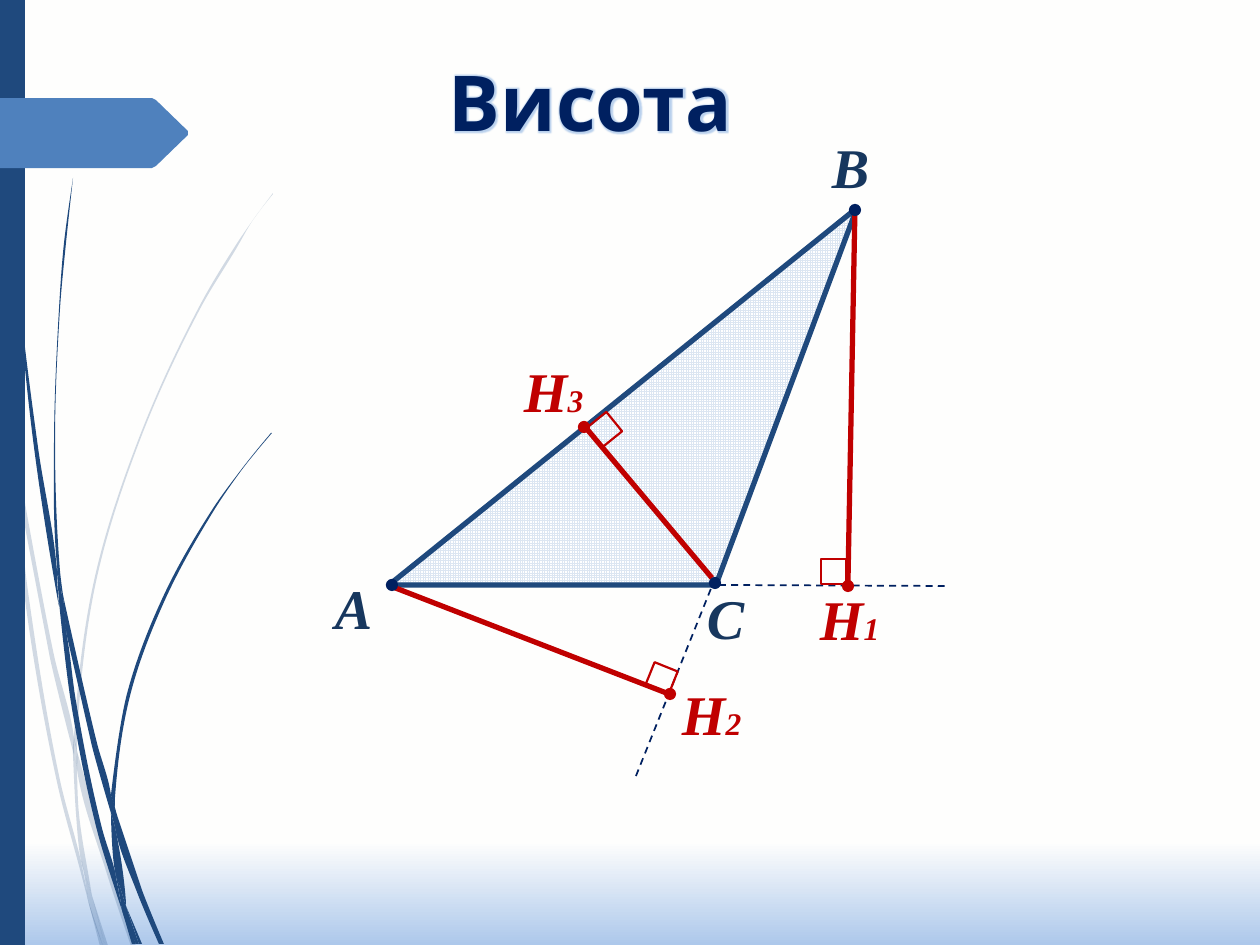
from math import hypot
from lxml.etree import SubElement, fromstring
from pptx import Presentation
from pptx.dml.color import RGBColor
from pptx.enum.dml import MSO_LINE, MSO_PATTERN
from pptx.enum.shapes import MSO_CONNECTOR as CONN, MSO_SHAPE as SHAPE
from pptx.enum.text import PP_ALIGN as ALIGN
from pptx.oxml.ns import nsdecls, qn
from pptx.util import Pt

PX = 914400 / 126
W, H = 1260, 945

NAVY = RGBColor(0x1F, 0x49, 0x7D)
BLUE = RGBColor(0x4F, 0x81, 0xBD)
INK = RGBColor(0x00, 0x20, 0x60)
LETTER = RGBColor(0x17, 0x37, 0x5E)
RED = RGBColor(0xC0, 0x00, 0x00)
PALE = RGBColor(0xDC, 0xE6, 0xF2)
WHITE = RGBColor(0xFF, 0xFF, 0xFF)
PAPER = RGBColor(0xFE, 0xFE, 0xFD)
SKY = RGBColor(0xAD, 0xC8, 0xEB)

# Outlines of the grass blade pieces
PALE_GRASS = [
    [(10, 441), (8, 406), (0, 355), (0, 377), (9, 433)],
    [(50, 658), (74, 755), (74, 738), (54, 655), (13, 435), (15, 474)],
    [(81, 765), (77, 751), (77, 769), (107, 874), (131, 946), (136, 946), (111, 872)],
    [(105, 946), (108, 946), (92, 896)],
    [(81, 861), (60, 780), (28, 591), (15, 474), (10, 441), (24, 592), (57, 782),
     (81, 873), (88, 900), (87, 891)],
    [(73, 755), (76, 814), (81, 861), (84, 872), (92, 896), (91, 890), (79, 814),
     (77, 769), (77, 766)],
    [(77, 736), (96, 582), (140, 440), (200, 309), (236, 249), (253, 220), (273, 194),
     (273, 193), (253, 220), (234, 248), (199, 307), (139, 438), (94, 581), (74, 736),
     (74, 738), (77, 751)],
    [(88, 900), (100, 946), (103, 946)],
    [(77, 766), (77, 769), (77, 751), (74, 738), (73, 755)],
    [(84, 872), (82, 861), (87, 891), (88, 900), (103, 946), (105, 946), (92, 896)],
]
DARK_GRASS = [
    [(6, 139), (18, 294), (34, 447), (58, 601), (59, 606), (57, 576), (57, 571),
     (38, 447), (19, 292), (8, 137), (5, 60), (4, 0), (3, 0), (4, 60)],
    [(92, 746), (111, 813), (111, 798), (111, 795), (97, 743), (63, 595), (67, 636)],
    [(118, 818), (115, 808), (115, 827), (137, 892), (159, 944), (164, 944), (142, 890)],
    [(115, 871), (102, 828), (76, 701), (67, 636), (59, 601), (71, 702), (97, 830),
     (116, 892), (122, 910), (121, 903)],
    [(63, 595), (60, 571), (55, 440), (60, 309), (66, 243), (73, 178), (64, 243),
     (59, 309), (54, 440), (57, 566), (62, 595)],
    [(139, 944), (142, 944), (126, 906)],
    [(59, 601), (67, 636), (63, 595), (62, 595), (57, 566), (57, 571)],
    [(115, 798), (130, 696), (165, 600), (213, 512), (241, 471), (256, 452), (272, 433),
     (271, 433), (256, 451), (241, 470), (212, 510), (163, 597), (127, 694), (111, 795),
     (115, 808)],
    [(122, 910), (132, 944), (136, 944)],
    [(111, 813), (115, 871), (121, 890), (126, 906), (126, 902), (115, 827), (113, 820)],
    [(111, 813), (113, 820), (115, 827), (115, 808), (111, 795), (111, 798)],
    [(121, 890), (115, 871), (121, 903), (122, 910), (136, 944), (139, 944), (126, 906)],
]
TAG = [(188, 135), (156, 166), (152, 168), (140, 168), (0, 168), (0, 98), (140, 98),
       (152, 98), (156, 100), (188, 131)]


def emu(*lengths):
    return [round(v * PX) for v in lengths]


def style(shape, fill=None, line=None, width=1.25):
    shape.shadow.inherit = False
    if fill is None:
        shape.fill.background()
    else:
        shape.fill.solid()
        shape.fill.fore_color.rgb = fill
    if line is None:
        shape.line.fill.background()
    else:
        shape.line.color.rgb = line
        shape.line.width = Pt(width)
    return shape


def add_preset(s, kind, x, y, w, h, **look):
    return style(s.shapes.add_shape(kind, *emu(x, y, w, h)), **look)


def add_outline(s, points, **look):
    start, *rest = [emu(*pt) for pt in points]
    builder = s.shapes.build_freeform(*start, scale=1.0)
    builder.add_line_segments(rest, close=True)
    return style(builder.convert_to_shape(), **look)


def add_line(s, start, end, color, width, dash=False):
    line = s.shapes.add_connector(CONN.STRAIGHT, *emu(*start, *end))
    line.line.color.rgb = color
    line.line.width = Pt(width)
    if dash:
        line.line.dash_style = MSO_LINE.DASH
    SubElement(line._element.spPr, qn("a:effectLst"))


def add_text(s, box, runs, font, color, italic=False, align=None, inset=0, wrap=False):
    """Place one paragraph made of (text, size) runs."""
    tf = s.shapes.add_textbox(*emu(*box)).text_frame
    tf.word_wrap = wrap
    tf.margin_left = tf.margin_right = emu(2 * inset)[0]
    tf.margin_top = tf.margin_bottom = emu(inset)[0]
    p = tf.paragraphs[0]
    p.alignment = align
    for text, size in runs:
        r = p.add_run()
        r.text = text
        r.font.name, r.font.size = font, Pt(size)
        r.font.bold, r.font.italic = True, italic
        r.font.color.rgb = color
    return p


def round_sides(shape):
    """Turn straight segments into curves, keeping sharp corners sharp."""
    segments = list(shape._element.iter(qn("a:moveTo"), qn("a:lnTo")))
    knots = [(int(g[0].get("x")), int(g[0].get("y"))) for g in segments]
    slopes = []
    for (ax, ay), (bx, by), (cx, cy) in zip(knots[-1:] + knots, knots, knots[1:] + knots[:1]):
        ux, uy, vx, vy = bx - ax, by - ay, cx - bx, cy - by
        n, m = hypot(ux, uy) or 1, hypot(vx, vy) or 1
        smooth = ux * vx + uy * vy > 0.9 * n * m
        slopes.append(((ux / n + vx / m) / 6, (uy / n + vy / m) / 6) if smooth else (0, 0))
    for i, seg in enumerate(segments[1:], 1):
        (ax, ay), (bx, by) = knots[i - 1:i + 1]
        (sx, sy), (ex, ey) = slopes[i - 1:i + 1]
        d = hypot(bx - ax, by - ay)
        seg.tag = qn("a:cubicBezTo")
        for j, (px, py) in enumerate([(ax + sx * d, ay + sy * d), (bx - ex * d, by - ey * d)]):
            seg.insert(j, fromstring(
                f'<a:pt {nsdecls("a")} x="{round(px)}" y="{round(py)}"/>'))


def add_grass(s, x, y, pieces, alpha=None):
    group = s.shapes.add_group_shape()
    for piece in pieces:
        blade = add_outline(group, [(x + px, y + py) for px, py in piece], fill=NAVY)
        round_sides(blade)
        if alpha:
            color = blade._element.spPr.find(qn("a:solidFill"))[0]
            SubElement(color, qn("a:alpha"), val=str(alpha * 1000))


def paint_background(s):
    fill = s.background.fill
    fill.gradient()
    fill.gradient_angle = 270
    for stop, pos, color in zip(fill.gradient_stops, (0.89, 1), (PAPER, SKY)):
        stop.position, stop.color.rgb = pos, color


def draw_side(s, x, y, h):
    add_grass(s, x, y, PALE_GRASS, alpha=20)
    add_grass(s, x, y, DARK_GRASS)
    add_preset(s, SHAPE.RECTANGLE, x, y, 25, h, fill=NAVY)
    add_outline(s, [(x + px, y + py) for px, py in TAG], fill=BLUE)


def draw_title(s, box):
    p = add_text(s, box, [("Висота", 44)], "Quicksand", INK,
                 align=ALIGN.CENTER, inset=6, wrap=True)
    rPr = p.runs[0]._r.get_or_add_rPr()
    ns = nsdecls("a")
    rPr.insert(0, fromstring(
        f'<a:ln {ns} w="9525"><a:solidFill><a:srgbClr val="254061"/></a:solidFill></a:ln>'))
    rPr.find(qn("a:solidFill")).addnext(fromstring(
        f'<a:effectLst {ns}><a:glow rad="38100"><a:srgbClr val="8EB4E3">'
        '<a:alpha val="60000"/></a:srgbClr></a:glow></a:effectLst>'))


def draw_triangle(s, x, y):
    def at(px, py):
        return x + px, y + py

    body = add_outline(s, [at(89, 465), at(557, 88), at(416, 465)], line=NAVY, width=3)
    body.fill.patterned()
    body.fill.pattern = MSO_PATTERN.SMALL_GRID
    body.fill.fore_color.rgb, body.fill.back_color.rgb = PALE, WHITE

    # Extended sides, then altitudes
    for start, end in [((419, 465), (649, 466)), ((336, 656), (412, 466))]:
        add_line(s, at(*start), at(*end), INK, 1, dash=True)
    for start, end in [((555, 88), (548, 461)), ((93, 467), (369, 574)),
                       ((286, 308), (412, 458))]:
        add_line(s, at(*start), at(*end), RED, 3)

    # Right-angle marks
    for left, top, turn in [(521, 439, 0), (349, 546, 22), (292, 297, 51)]:
        add_preset(s, SHAPE.RECTANGLE, *at(left, top), 25, 25, line=RED).rotation = turn

    # Points with their labels: centre, label corner, letter, index
    for (cx, cy), corner, letter, index in [
        ((92, 465), (35, 453), "А", ""),
        ((555, 90), (532, 12), "В", ""),
        ((415, 463), (407, 463), "С", ""),
        ((548, 466), (520, 464), "Н", "1"),
        ((370, 574), (382, 559), "Н", "2"),
        ((284, 307), (224, 236), "Н", "3"),
    ]:
        dot = RED if index else INK
        add_preset(s, SHAPE.FLOWCHART_CONNECTOR, *at(cx - 5, cy - 5), 10, 10,
                   fill=dot, line=dot)
        runs = [(letter, 32)] + ([(index, 18)] if index else [])
        add_text(s, (*at(*corner), 61 if index else 40, 68), runs,
                 "Times New Roman", RED if index else LETTER, italic=True)


def main():
    prs = Presentation()
    prs.slide_width, prs.slide_height = emu(W, H)
    s = prs.slides.add_slide(prs.slide_layouts[6])
    paint_background(s)
    draw_side(s, 0, 0, H)
    draw_title(s, (222, 48, 737, 106))
    draw_triangle(s, 300, 120)
    prs.save("out.pptx")


if __name__ == "__main__":
    main()
